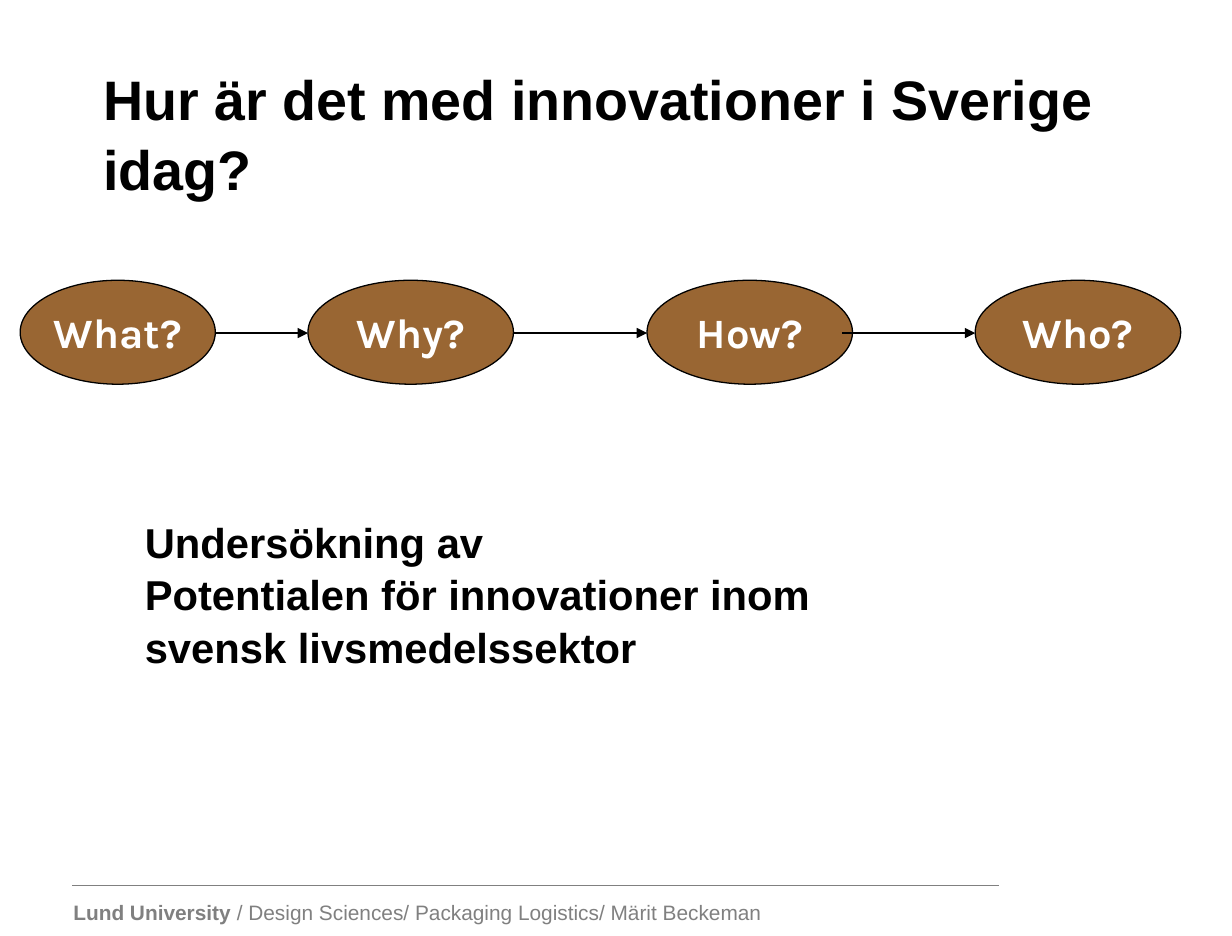
from lxml import etree
from pptx import Presentation
from pptx.dml.color import RGBColor
from pptx.enum.shapes import MSO_CONNECTOR as Link, MSO_SHAPE as Shape
from pptx.enum.text import MSO_ANCHOR as Anchor, PP_ALIGN as Align
from pptx.oxml.ns import qn
from pptx.util import Cm, Pt

BLACK, WHITE, GRAY, BROWN = "000000", "FFFFFF", "808080", "996633"
TOP, HIGH = 5.69, 2.11
MID = 6.76


def paint(color, value):
    """Apply a hex string to a fill, line or font."""
    if hasattr(color, "solid"):
        color.solid()
        color.fore_color.rgb = RGBColor.from_string(value)
    else:
        color.color.rgb = RGBColor.from_string(value)


def write(frame, *paras, size=24, font="Arial", color=BLACK, align=Align.LEFT,
          anchor=Anchor.TOP, wrap=True, space=1.05):
    """Fill a frame; each paragraph is a list of (text, bold) runs."""
    frame.word_wrap = wrap
    frame.vertical_anchor = anchor
    for i, runs in enumerate(paras):
        para = frame.add_paragraph() if i else frame.paragraphs[0]
        para.alignment = align
        para.line_spacing = space
        for text, bold in runs:
            run = para.add_run()
            run.text = text
            run.font.size = Pt(size)
            run.font.name = font
            run.font.bold = bold
            paint(run.font, color)


def add_text(slide, place, *paras, **style):
    box = slide.shapes.add_textbox(*map(Cm, place))
    write(box.text_frame, *paras, **style)


def add_oval(slide, left, width, label):
    oval = slide.shapes.add_shape(
        Shape.OVAL, Cm(left), Cm(TOP), Cm(width), Cm(HIGH))
    oval.shadow.inherit = False
    paint(oval.fill, BROWN)
    paint(oval.line, BLACK)
    oval.line.width = Pt(0.75)
    write(oval.text_frame, [(label, True)], font="Karla", color=WHITE,
          align=Align.CENTER, anchor=Anchor.MIDDLE, wrap=False, space=1)


def add_line(slide, start, end, y, color=BLACK, width=0.75, arrow=False):
    line = slide.shapes.add_connector(
        Link.STRAIGHT, Cm(start), Cm(y), Cm(end), Cm(y))
    paint(line.line, color)
    line.line.width = Pt(width)
    if arrow:
        tip = etree.SubElement(line.line._get_or_add_ln(), qn("a:tailEnd"))
        tip.set("type", "triangle")
    etree.SubElement(line._element.spPr, qn("a:effectLst"))


def main():
    deck = Presentation()
    deck.slide_width, deck.slide_height = Cm(25), Cm(19)
    slide = deck.slides.add_slide(deck.slide_layouts[6])

    add_line(slide, 1.47, 20.27, 17.98, color=GRAY, width=0.5)
    add_text(slide, (1.24, 18.11, 14.61, 0.76),
             [("Lund University ", True),
              ("/ Design Sciences/ Packaging Logistics/ Märit Beckeman", False)],
             size=12, color=GRAY)
    add_text(slide, (1.85, 1.27, 22.43, 2.82),
             [("Hur är det med innovationer i Sverige idag?", True)],
             size=32, anchor=Anchor.MIDDLE)

    for left, width, label in ((0.41, 3.96, "What?"), (6.25, 4.17, "Why?"),
                               (13.13, 4.17, "How?"), (19.79, 4.17, "Who?")):
        add_oval(slide, left, width, label)
    for start, end in ((4.37, 6.25), (10.42, 13.13), (17.09, 19.79)):
        add_line(slide, start, end, MID, arrow=True)

    add_text(slide, (2.69, 10.31, 16.21, 3.33),
             [("Undersökning av", True)],
             [("Potentialen för innovationer inom svensk livsmedelssektor", True)])
    deck.save("out.pptx")


if __name__ == "__main__":
    main()
